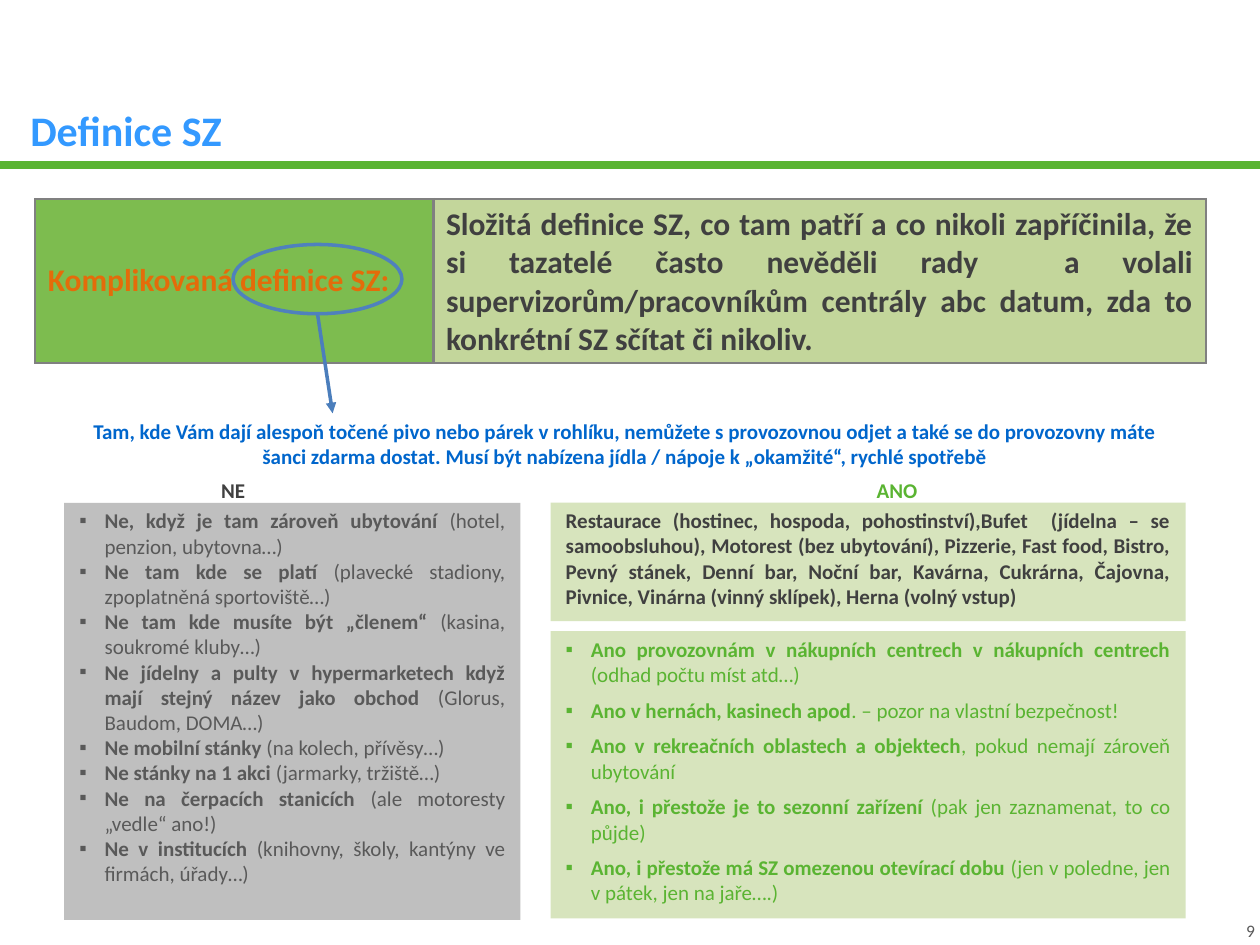
from lxml import etree
from pptx import Presentation
from pptx.dml.color import RGBColor
from pptx.enum.shapes import MSO_CONNECTOR, MSO_SHAPE
from pptx.enum.text import MSO_ANCHOR, PP_ALIGN
from pptx.oxml import parse_xml
from pptx.oxml.ns import nsdecls, qn
from pptx.util import Inches, Pt

LEFT, MID, RIGHT, JUST = PP_ALIGN.LEFT, PP_ALIGN.CENTER, PP_ALIGN.RIGHT, PP_ALIGN.JUSTIFY
TOP, CENTER, BOTTOM = MSO_ANCHOR.TOP, MSO_ANCHOR.MIDDLE, MSO_ANCHOR.BOTTOM
RECT, OVAL = MSO_SHAPE.RECTANGLE, MSO_SHAPE.OVAL
LINE = MSO_CONNECTOR.STRAIGHT

COLORS = {
    "title": "3399FF", "green": "5AB432", "gray": "595959", "dark": "404040",
    "orange": "E46C0A", "blue": "0066CC", "ring": "4F81BD", "arrow": "4B7EBC",
    "border": "808080", "head": "7DBC4F", "body": "C3D69B",
    "no": "BFBFBF", "yes": "D7E4BD",
}
FONT = "Calibri"

TITLE = "Definice SZ"
CELLS = [
    ("Komplikovaná definice SZ:", 3.16, "head", "orange", LEFT),
    ("Složitá definice SZ, co tam patří a co nikoli zapříčinila, že si tazatelé "
     "často nevěděli rady  a volali supervizorům/pracovníkům centrály abc datum, "
     "zda to konkrétní SZ sčítat či nikoliv.", 6.13, "body", "dark", JUST),
]
RULE = ("Tam, kde Vám dají alespoň točené pivo nebo párek v rohlíku, nemůžete "
        "s provozovnou odjet a také se do provozovny máte šanci zdarma dostat. "
        "Musí být nabízena jídla / nápoje k „okamžité“, rychlé spotřebě")
HEADS = [("NE", 0.75, "dark"), ("ANO", 6.02, "green")]
NO = [
    ("Ne, když je tam zároveň ubytování ", "(hotel, penzion, ubytovna…)"),
    ("Ne tam kde se platí ", "(plavecké stadiony, zpoplatněná sportoviště…)"),
    ("Ne tam kde musíte být „členem“ ", "(kasina, soukromé kluby…)"),
    ("Ne jídelny a pulty v hypermarketech když mají stejný název jako obchod ",
     "(Glorus, Baudom, DOMA…)"),
    ("Ne mobilní stánky ", "(na kolech, přívěsy…)"),
    ("Ne stánky na 1 akci ", "(jarmarky, tržiště…)"),
    ("Ne na čerpacích stanicích ", "(ale motoresty „vedle“ ano!)"),
    ("Ne v institucích ", "(knihovny, školy, kantýny ve firmách, úřady…)"),
]
YES = [
    ("Ano provozovnám v nákupních centrech v nákupních centrech ",
     "(odhad počtu míst atd…)"),
    ("Ano v hernách, kasinech apod", ". – pozor na vlastní bezpečnost!"),
    ("Ano v rekreačních oblastech a objektech", ", pokud nemají zároveň ubytování"),
    ("Ano, i přestože je to sezonní zařízení ", "(pak jen zaznamenat, to co půjde)"),
    ("Ano, i přestože má SZ omezenou otevírací dobu ",
     "(jen v poledne, jen v pátek, jen na jaře….)"),
]
KINDS = [("Restaurace (hostinec, hospoda, pohostinství),Bufet  (jídelna – se "
          "samoobsluhou), Motorest (bez ubytování), Pizzerie, Fast food, Bistro, "
          "Pevný stánek, Denní bar, Noční bar, Kavárna, Cukrárna, Čajovna, Pivnice, "
          "Vinárna (vinný sklípek), Herna (volný vstup)",)]
PANELS = [
    (NO, (0.51, 3.99, 3.62, 3.31), "no", "gray", 0, True),
    (YES, (4.37, 5.01, 5.04, 2.28), "yes", "green", 6, True),
    (KINDS, (4.37, 3.99, 5.04, 0.94), "yes", "dark", 0, False),
]


def rgb(name):
    return RGBColor.from_string(COLORS[name])


def style(run, size, color, bold=True):
    font = run.font
    font.size, font.bold, font.name = Pt(size), bold, FONT
    font.color.rgb = rgb(color)


def setup(frame, side, top, anchor=TOP):
    frame.word_wrap = True
    frame.margin_left = frame.margin_right = Inches(side)
    frame.margin_top = frame.margin_bottom = Inches(top)
    frame.vertical_anchor = anchor


def write(frame, text, size, color, align, bold=True):
    frame.text = text
    para = frame.paragraphs[0]
    para.alignment = align
    style(para.runs[0], size, color, bold)
    return para.runs[0]


def label(slide, text, box, size, color, align, pad=(0.04, 0), anchor=TOP, bold=True):
    frame = slide.shapes.add_textbox(*map(Inches, box)).text_frame
    setup(frame, *pad, anchor)
    return write(frame, text, size, color, align, bold)


def bullet(para, color):
    props = para._p.get_or_add_pPr()
    props.set("marL", str(Inches(0.2)))
    props.set("indent", str(-Inches(0.2)))
    tint = etree.SubElement(props, qn("a:buClr"))
    etree.SubElement(tint, qn("a:srgbClr"), val=COLORS[color])
    etree.SubElement(props, qn("a:buFont"), typeface="Arial")
    etree.SubElement(props, qn("a:buChar"), char="▪")


def panel(slide, items, box, fill, color, gap, marked):
    shape = slide.shapes.add_shape(RECT, *map(Inches, box))
    shape.shadow.inherit = False
    shape.fill.solid()
    shape.fill.fore_color.rgb = rgb(fill)
    shape.line.fill.background()
    frame = shape.text_frame
    setup(frame, 0.12, 0.04)
    for i, parts in enumerate(items):
        para = frame.add_paragraph() if i else frame.paragraphs[0]
        para.alignment = JUST
        if i and gap:
            para.space_before = Pt(gap)
        if marked:
            bullet(para, color)
        for j, part in enumerate(parts):
            run = para.add_run()
            run.text = part
            style(run, 12, color, j == 0)


def line(slide, start, end, color, width):
    link = slide.shapes.add_connector(LINE, *map(Inches, start + end))
    link.line.color.rgb = rgb(color)
    link.line.width = Pt(width)
    etree.SubElement(link._element.spPr, qn("a:effectLst"))
    return link


def grid(slide):
    wide = sum(cell[1] for cell in CELLS)
    spot = map(Inches, (0.28, 1.58, wide, 1.3))
    table = slide.shapes.add_table(1, len(CELLS), *spot).table
    table.first_row = table.horz_banding = False
    for i, (text, width, fill, color, align) in enumerate(CELLS):
        table.columns[i].width = Inches(width)
        cell = table.cell(0, i)
        cell.vertical_anchor = CENTER
        cell.fill.solid()
        cell.fill.fore_color.rgb = rgb(fill)
        write(cell.text_frame, text, 18, color, align)
        props = cell._tc.get_or_add_tcPr()
        for j, side in enumerate(("lnL", "lnR", "lnT", "lnB")):
            props.insert(j, parse_xml(
                f'<a:{side} {nsdecls("a")} w="{Pt(1.5)}"><a:solidFill>'
                f'<a:srgbClr val="{COLORS["border"]}"/></a:solidFill></a:{side}>'))


def shade(run):
    fill = run._r.get_or_add_rPr().find(qn("a:solidFill"))
    fill.addnext(parse_xml(
        f'<a:effectLst {nsdecls("a")}><a:outerShdw blurRad="38100" dist="38100" '
        'dir="2700000" algn="tl"><a:srgbClr val="000000"><a:alpha val="43000"/>'
        '</a:srgbClr></a:outerShdw></a:effectLst>'))


def main():
    """Build the slide on what counts as a refreshment venue."""
    deck = Presentation()
    deck.slide_width, deck.slide_height = Inches(10), Inches(7.5)
    slide = deck.slides.add_slide(deck.slide_layouts[5])
    line(slide, (0, 1.31), (10, 1.31), "green", 4.75)
    title = slide.shapes.title
    title.left, title.top, title.width, title.height = map(Inches, (0.2, 0.44, 8.27, 0.79))
    setup(title.text_frame, 0.04, 0, BOTTOM)
    write(title.text_frame, TITLE, 24, "title", LEFT)
    label(slide, "9", (8.9, 7.3, 1.06, 0.17), 10, "gray", RIGHT, (0, 0), bold=False)
    grid(slide)
    shade(label(slide, RULE, (0.51, 3.28, 8.9, 0.63), 12, "blue", MID, (0.04, 0.04)))
    for spec in PANELS:
        panel(slide, *spec)
    for text, left, color in HEADS:
        label(slide, text, (left, 3.75, 2.2, 0.24), 12, color, MID, anchor=BOTTOM)
    arrow = line(slide, (2.52, 2.49), (2.64, 3.28), "arrow", 2)
    etree.SubElement(arrow.line._get_or_add_ln(), qn("a:tailEnd"), type="triangle")
    ring = slide.shapes.add_shape(OVAL, *map(Inches, (1.85, 1.94, 1.34, 0.55)))
    ring.shadow.inherit = False
    ring.fill.background()
    ring.line.color.rgb = rgb("ring")
    ring.line.width = Pt(2)
    deck.save("out.pptx")


if __name__ == "__main__":
    main()
